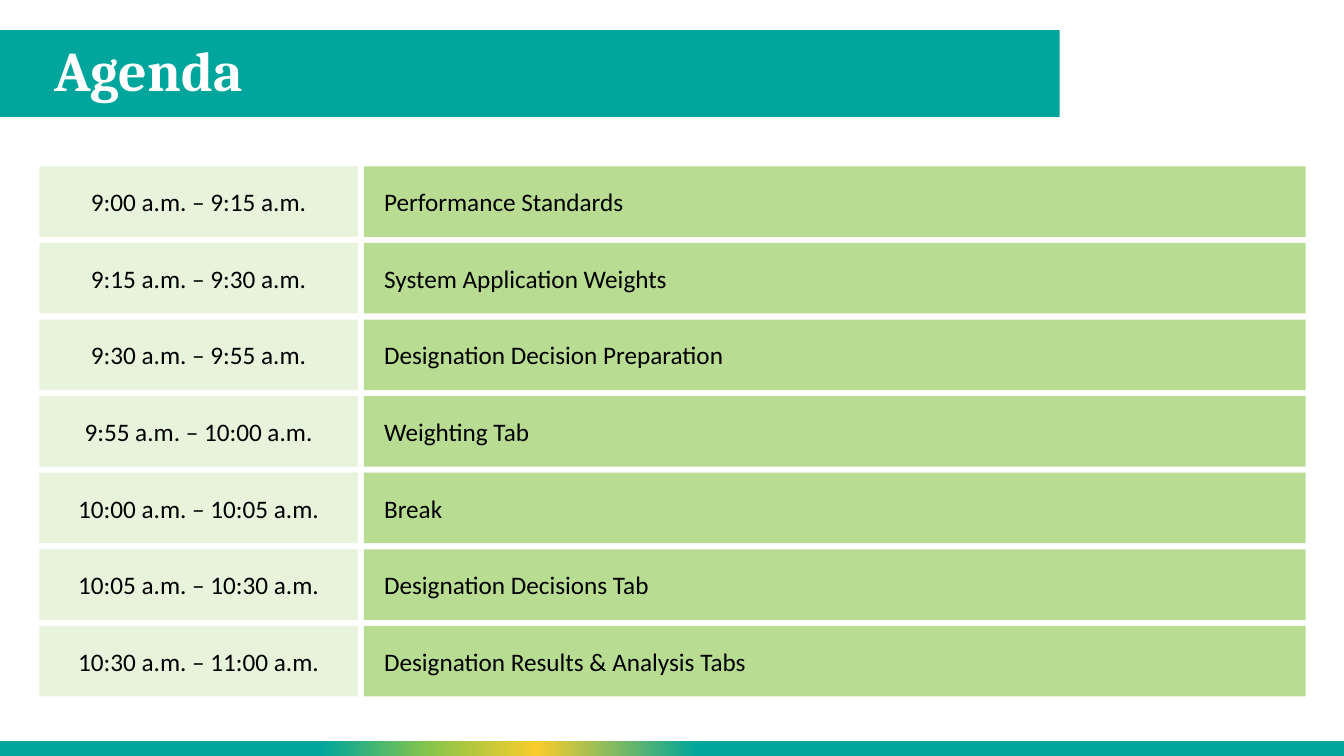
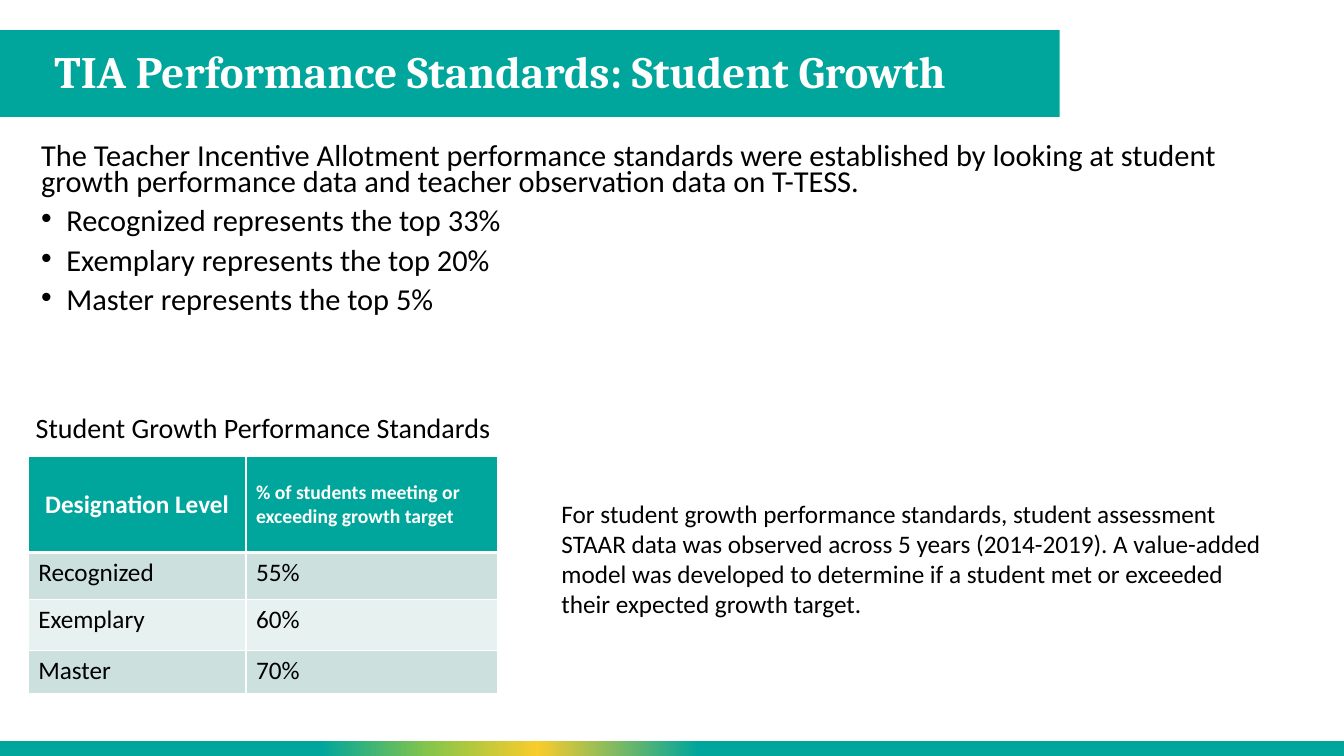
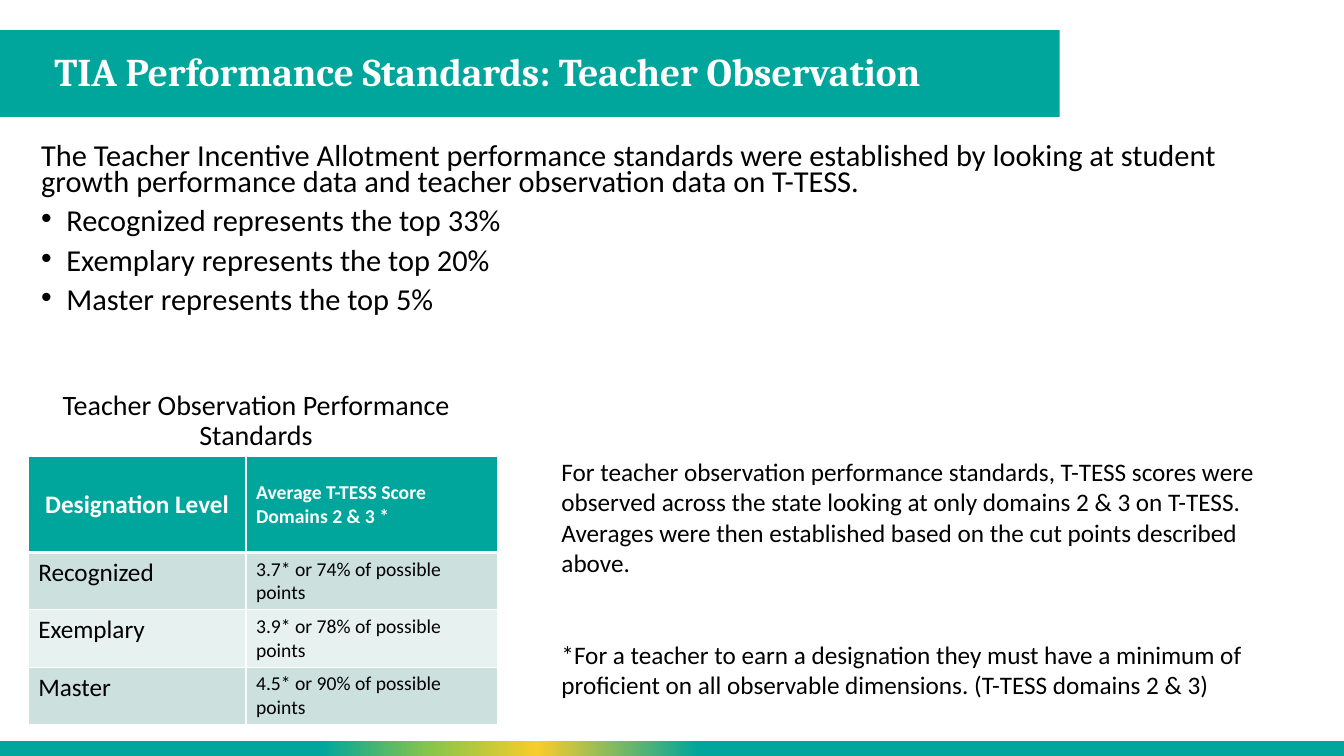
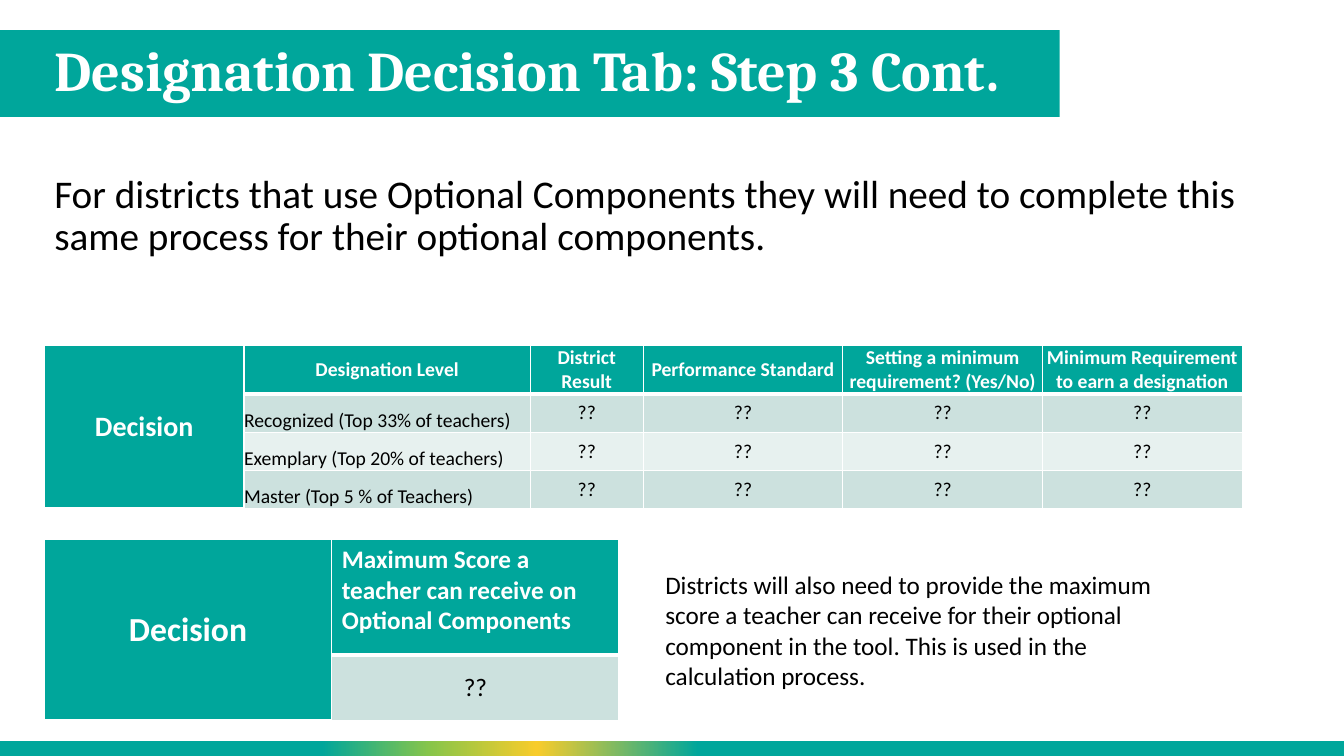
from dataclasses import dataclass
from itertools import product
from typing import NamedTuple, Optional

from lxml import etree
from pptx import Presentation
from pptx.dml.color import RGBColor
from pptx.enum import shapes, text
from pptx.oxml.ns import qn
from pptx import util as u

EMU_PER_PX = 9144  # 100 px to the inch
LEFT, CENTER = text.PP_ALIGN.LEFT, text.PP_ALIGN.CENTER
TOP, MIDDLE, BOTTOM = (
    text.MSO_ANCHOR.TOP,
    text.MSO_ANCHOR.MIDDLE,
    text.MSO_ANCHOR.BOTTOM,
)


@dataclass(frozen=True)
class Theme:
    teal: str = "00A69B"
    yellow: str = "F8CC2B"
    green: str = "87C54A"
    time_fill: str = "E7F3DB"
    topic_fill: str = "B7DC92"
    band_dark: str = "CCE1DE"
    band_light: str = "E7F1EF"
    white: str = "FFFFFF"
    black: str = "000000"
    title_font: str = "Cambria"
    body_font: str = "Calibri"
    statement: float = 28
    decision: float = 24
    intro: float = 21.7
    caption: float = 20
    body: float = 18
    small: float = 14


THEME = Theme()


class Box(NamedTuple):
    left: int
    top: int
    width: int
    height: int

    def emu(self) -> list[u.Emu]:
        return [px(value) for value in self]


@dataclass(frozen=True)
class Cell:
    content: str
    size: float = THEME.body
    align: text.PP_ALIGN = LEFT
    anchor: text.MSO_ANCHOR = TOP
    header: bool = False
    rows_spanned: int = 1


@dataclass(frozen=True)
class AgendaItem:
    time: str
    topic: str


@dataclass(frozen=True)
class Standards:
    """One slide about the standards for a measure."""

    title: str
    title_size: float
    caption: str
    caption_box: Box
    measure: str
    values: tuple[str, str, str]
    value_size: float
    row_heights: tuple[int, ...]
    remarks: tuple[str, ...]
    remarks_box: Box


TITLE_BAND = Box(-1, 30, 1052, 86)
TITLE_BOX = Box(44, 30, 1006, 86)
FOOTER_BAND = Box(-1, 735, 1334, 15)
FOOTER_STOPS = (
    (0, THEME.teal),
    (48, THEME.teal),
    (60, THEME.yellow),
    (68, THEME.green),
    (76, THEME.teal),
    (100, THEME.teal),
)

AGENDA_TOP, AGENDA_PITCH, AGENDA_HEIGHT = 165, 76, 70
AGENDA = (
    AgendaItem("9:00 a.m. – 9:15 a.m.", "Performance Standards"),
    AgendaItem("9:15 a.m. – 9:30 a.m.", "System Application Weights"),
    AgendaItem("9:30 a.m. – 9:55 a.m.", "Designation Decision Preparation"),
    AgendaItem("9:55 a.m. – 10:00 a.m.", "Weighting Tab"),
    AgendaItem("10:00 a.m. – 10:05 a.m.", "Break"),
    AgendaItem("10:05 a.m. – 10:30 a.m.", "Designation Decisions Tab"),
    AgendaItem("10:30 a.m. – 11:00 a.m.", "Designation Results & Analysis Tabs"),
)

INTRO = (
    "The Teacher Incentive Allotment performance standards were established by "
    "looking at student growth performance data and teacher observation data on T-TESS."
)
LEVEL_SHARES = {"Recognized": "33%", "Exemplary": "20%", "Master": "5%"}

STANDARDS = (
    Standards(
        title="TIA Performance Standards: Student Growth",
        title_size=32,
        caption="Student Growth Performance Standards",
        caption_box=Box(21, 406, 480, 45),
        measure="% of students meeting or exceeding growth target",
        values=("55%", "60%", "70%"),
        value_size=THEME.body,
        row_heights=(95, 47, 50, 43),
        remarks=(
            "For student growth performance standards, student assessment STAAR data "
            "was observed across 5 years (2014-2019). A value-added model was developed "
            "to determine if a student met or exceeded their expected growth target.",
        ),
        remarks_box=Box(547, 489, 728, 162),
    ),
    Standards(
        title="TIA Performance Standards: Teacher Observation",
        title_size=28,
        caption="Teacher Observation Performance Standards",
        caption_box=Box(14, 383, 480, 45),
        measure="Average T-TESS Score Domains 2 & 3 *",
        values=(
            "3.7* or 74% of possible points",
            "3.9* or 78% of possible points",
            "4.5* or 90% of possible points",
        ),
        value_size=THEME.small,
        row_heights=(95, 57, 57, 57),
        remarks=(
            "For teacher observation performance standards, T-TESS scores were observed "
            "across the state looking at only domains 2 & 3 on T-TESS. Averages were then "
            "established based on the cut points described above.",
            "*For a teacher to earn a designation they must have a minimum of proficient "
            "on all observable dimensions. (T-TESS domains 2 & 3)",
        ),
        remarks_box=Box(547, 448, 728, 252),
    ),
)

DECISION_HEADERS = (
    "Designation Level",
    "District Result",
    "Performance Standard",
    "Setting a minimum requirement? (Yes/No)",
    "Minimum Requirement to earn a designation",
)
DECISION_LEVELS = (
    "Recognized (Top 33% of teachers)",
    "Exemplary (Top 20% of teachers)",
    "Master (Top 5 % of Teachers)",
)


def px(value: int) -> u.Emu:
    return u.Emu(value * EMU_PER_PX)


def add_xml(parent, tag: str, **attributes):
    return etree.SubElement(parent, qn(tag), attributes)


def write(
    frame,
    content: str,
    *,
    size: float = THEME.body,
    font: str = THEME.body_font,
    color: str = THEME.black,
    bold: bool = False,
    align: text.PP_ALIGN = LEFT,
    line_spacing: float = 1.0,
    space_before: float = 0,
    bullet: bool = False,
) -> None:
    """Fill the empty first paragraph, or append one with space before it."""
    paragraph = frame.paragraphs[0]
    if paragraph.text:
        paragraph = frame.add_paragraph()
        paragraph.space_before = u.Pt(space_before)
    else:
        paragraph.space_before = u.Pt(0)
    paragraph.alignment = align
    paragraph.line_spacing = line_spacing
    if bullet:
        properties = paragraph._p.get_or_add_pPr()
        properties.set("marL", str(px(25)))
        properties.set("indent", str(px(-25)))
        add_xml(properties, "a:buFont", typeface="Arial")
        add_xml(properties, "a:buChar", char="•")
    run = paragraph.add_run()
    run.text = content
    run.font.size = u.Pt(size)
    run.font.name = font
    run.font.bold = bold
    run.font.color.rgb = RGBColor.from_string(color)


def add_rectangle(slide, box: Box, fill: str):
    shape = slide.shapes.add_shape(shapes.MSO_SHAPE.RECTANGLE, *box.emu())
    shape.shadow.inherit = False
    shape.line.fill.background()
    shape.fill.solid()
    shape.fill.fore_color.rgb = RGBColor.from_string(fill)
    return shape


def add_text_frame(slide, box: Box):
    frame = slide.shapes.add_textbox(*box.emu()).text_frame
    frame.word_wrap = True
    return frame


def add_shared_bands(slide, layout) -> None:
    """Draw the title and footer bands, then move them behind the layout's text."""
    title_band = add_rectangle(slide, TITLE_BAND, THEME.teal)
    footer_band = add_rectangle(slide, FOOTER_BAND, THEME.teal)
    footer_band.fill.gradient()
    footer_band.fill.gradient_angle = 180
    stops = footer_band.element.find(".//" + qn("a:gsLst"))
    stops.clear()
    for position, color in FOOTER_STOPS:
        stop = add_xml(stops, "a:gs", pos=str(position * 1000))
        add_xml(stop, "a:srgbClr", val=color)
    for band in (footer_band, title_band):
        layout.shapes.element.insert(2, band.element)


def add_titled_slide(presentation, layout, title: str, size: float):
    slide = presentation.slides.add_slide(layout)
    placeholder = slide.shapes.title
    placeholder.left, placeholder.top, placeholder.width, placeholder.height = TITLE_BOX.emu()
    frame = placeholder.text_frame
    frame.auto_size = text.MSO_AUTO_SIZE.NONE
    frame.vertical_anchor = MIDDLE
    write(frame, title, size=size, font=THEME.title_font, color=THEME.white,
          bold=True, line_spacing=0.9)
    return slide


def set_borders(cell, bottom_points: int) -> None:
    properties = cell._tc.get_or_add_tcPr()
    for side, points in (("L", 1), ("R", 1), ("T", 1), ("B", bottom_points)):
        line = add_xml(properties, f"a:ln{side}", w=str(u.Pt(points)))
        add_xml(add_xml(line, "a:solidFill"), "a:srgbClr", val=THEME.white)


def add_grid(
    slide,
    left: int,
    top: int,
    widths: tuple[int, ...],
    heights: tuple[int, ...],
    rows: list[list[Optional[Cell]]],
    tight: bool = False,
) -> None:
    """Add a banded table; None marks a place covered by the cell above."""
    box = Box(left, top, sum(widths), sum(heights))
    table = slide.shapes.add_table(len(heights), len(widths), *box.emu()).table
    for column, width in zip(table.columns, widths):
        column.width = px(width)
    for row, height in zip(table.rows, heights):
        row.height = px(height)
    for row_index, column_index in product(range(len(heights)), range(len(widths))):
        entry = rows[row_index][column_index]
        if entry is None:
            continue
        cell = table.cell(row_index, column_index)
        if entry.rows_spanned > 1:
            cell.merge(table.cell(row_index + entry.rows_spanned - 1, column_index))
        if tight:
            cell.margin_left = cell.margin_right = cell.margin_top = cell.margin_bottom = 0
        cell.vertical_anchor = entry.anchor
        set_borders(cell, 3 if entry.header else 1)
        band = THEME.band_dark if row_index % 2 else THEME.band_light
        cell.fill.solid()
        cell.fill.fore_color.rgb = RGBColor.from_string(THEME.teal if entry.header else band)
        write(cell.text_frame, entry.content, size=entry.size, align=entry.align,
              color=THEME.white if entry.header else THEME.black, bold=entry.header)


def fill_agenda(slide) -> None:
    for index, item in enumerate(AGENDA):
        top = AGENDA_TOP + index * AGENDA_PITCH
        time = add_rectangle(slide, Box(39, top, 316, AGENDA_HEIGHT), THEME.time_fill)
        topic = add_rectangle(slide, Box(361, top, 934, AGENDA_HEIGHT), THEME.topic_fill)
        topic.text_frame.margin_left = topic.text_frame.margin_right = px(20)
        for shape, content, align in ((time, item.time, CENTER), (topic, item.topic, LEFT)):
            shape.text_frame.vertical_anchor = MIDDLE
            write(shape.text_frame, content, align=align)


def fill_standards(slide, standards: Standards) -> None:
    intro = add_text_frame(slide, Box(31, 140, 1244, 182))
    write(intro, INTRO, size=THEME.intro, line_spacing=0.7)
    for level, share in LEVEL_SHARES.items():
        write(intro, f"{level} represents the top {share}", size=THEME.intro,
              line_spacing=0.7, space_before=10, bullet=True)

    caption = add_text_frame(slide, standards.caption_box)
    write(caption, standards.caption, size=THEME.caption, align=CENTER, line_spacing=0.9)

    header = [
        Cell("Designation Level", align=CENTER, anchor=MIDDLE, header=True),
        Cell(standards.measure, THEME.small, anchor=MIDDLE, header=True),
    ]
    levels = [
        [Cell(level), Cell(value, standards.value_size)]
        for level, value in zip(LEVEL_SHARES, standards.values)
    ]
    add_grid(slide, 28, 453, (216, 250), standards.row_heights, [header, *levels])

    remarks = add_text_frame(slide, standards.remarks_box)
    for remark in standards.remarks:
        write(remarks, remark, space_before=44)


def fill_optional_components(slide) -> None:
    statement = add_text_frame(slide, Box(44, 168, 1244, 487))
    write(statement, "For districts that use Optional Components they will need to complete "
          "this same process for their optional components.",
          size=THEME.statement, line_spacing=0.9)

    unknown = Cell("??", THEME.small, CENTER, MIDDLE)
    header = [Cell("Decision", THEME.caption, CENTER, MIDDLE, True, rows_spanned=4)]
    header += [Cell(name, THEME.small, CENTER, MIDDLE, True) for name in DECISION_HEADERS]
    levels = [
        [None, Cell(level, THEME.small, anchor=BOTTOM)] + [unknown] * 4
        for level in DECISION_LEVELS
    ]
    add_grid(slide, 44, 343, (198, 284, 112, 198, 198, 198), (48, 38, 38, 38),
             [header, *levels], tight=True)

    maximum_score = [
        [
            Cell("Decision", THEME.decision, CENTER, MIDDLE, True, rows_spanned=2),
            Cell("Maximum Score a teacher can receive on Optional Components", header=True),
        ],
        [None, Cell("??", align=CENTER, anchor=MIDDLE)],
    ]
    add_grid(slide, 44, 535, (285, 285), (115, 65), maximum_score)

    remark = add_text_frame(slide, Box(650, 560, 534, 131))
    write(remark, "Districts will also need to provide the maximum score a teacher can receive "
          "for their optional component in the tool. This is used in the calculation process.")


def main() -> None:
    presentation = Presentation()
    presentation.slide_width, presentation.slide_height = px(1333), px(750)
    layout = presentation.slide_layouts.get_by_name("Title Only")

    agenda = add_titled_slide(presentation, layout, "Agenda", 40)
    add_shared_bands(agenda, layout)
    fill_agenda(agenda)
    for standards in STANDARDS:
        slide = add_titled_slide(presentation, layout, standards.title, standards.title_size)
        fill_standards(slide, standards)
    fill_optional_components(
        add_titled_slide(presentation, layout, "Designation Decision Tab: Step 3 Cont.", 40)
    )
    presentation.save("out.pptx")


if __name__ == "__main__":
    main()
